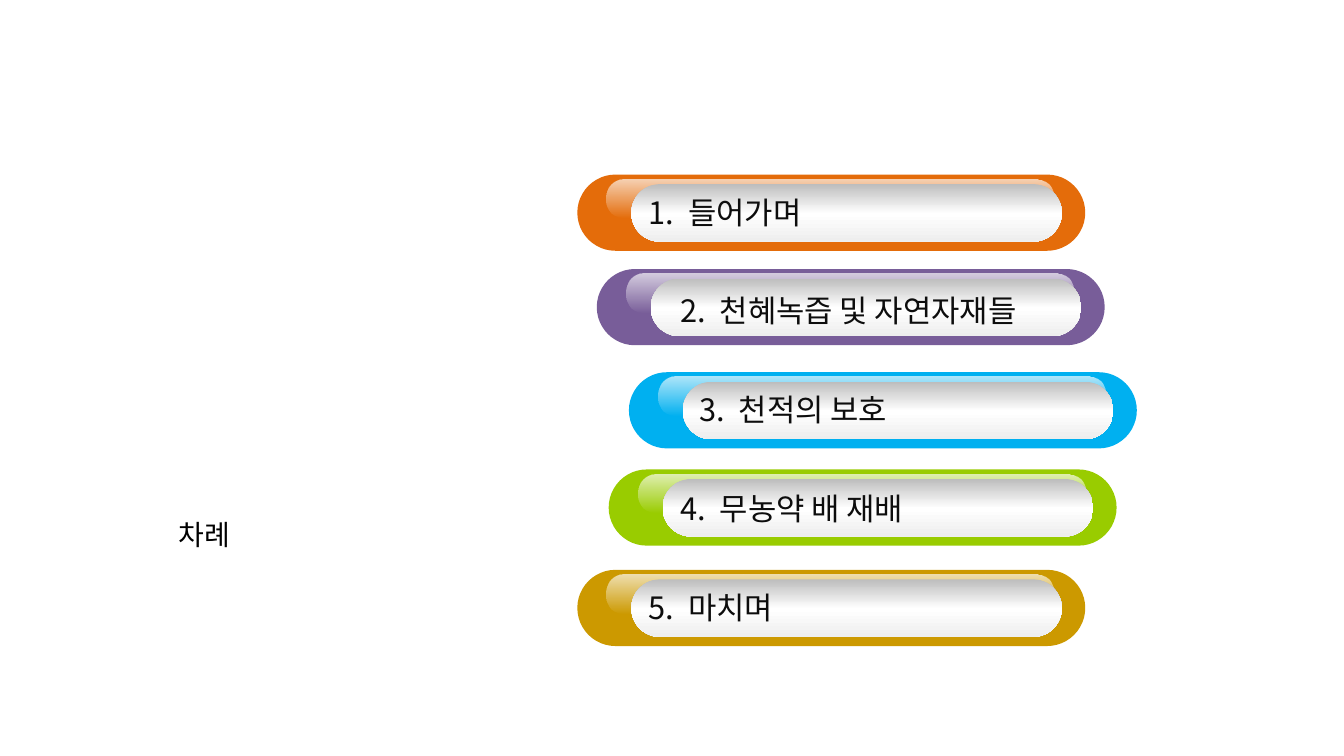
from lxml import etree
from pptx import Presentation
from pptx.dml.color import RGBColor
from pptx.enum import shapes, text
from pptx.oxml.ns import qn
from pptx.util import Cm, Pt

FONT = "Noto Sans CJK KR"
GLOSS = [(0, "FFFFFF", 70), (100, "FFFFFF", 0)]
SILVER = [(0, "BDBDBD", 100), (51, "FFFFFF", 100), (100, "EEEEEE", 100)]


def add_pill(group, box, roundness, stops):
    """Add a rounded bar; stops are (position, colour, opacity) in percent, top to bottom."""
    pill = group.shapes.add_shape(
        shapes.MSO_SHAPE.ROUNDED_RECTANGLE, *[Cm(length) for length in box])
    pill.adjustments[0] = roundness
    pill.shadow.inherit = False
    pill.line.fill.background()
    if len(stops) == 1:
        pill.fill.solid()
        pill.fill.fore_color.rgb = RGBColor.from_string(stops[0][1])
        return
    pill.fill.gradient()
    pill.fill.gradient_angle = 270
    stop_list = next(pill._element.iter(qn("a:gsLst")))
    for old_stop in list(stop_list):
        stop_list.remove(old_stop)
    for position, colour, opacity in stops:
        stop = etree.SubElement(stop_list, qn("a:gs"), pos=str(position * 1000))
        shade = etree.SubElement(stop, qn("a:srgbClr"), val=colour)
        etree.SubElement(shade, qn("a:alpha"), val=str(opacity * 1000))


def write_line(shape, words, size, colour):
    frame = shape.text_frame
    frame.word_wrap = True
    frame.vertical_anchor = text.MSO_ANCHOR.MIDDLE
    para = frame.paragraphs[0]
    para.text = words
    para.alignment = text.PP_ALIGN.LEFT
    para.font.size = Pt(size)
    para.font.name = FONT
    para.font.color.rgb = RGBColor.from_string(colour)
    etree.SubElement(para.font._element, qn("a:ea"), typeface=FONT)
    return para


deck = Presentation()
deck.slide_width, deck.slide_height = Cm(33.87), Cm(19.05)
page = deck.slides.add_slide(deck.slide_layouts[5])

title = page.shapes.title
title.left, title.top, title.width, title.height = Cm(4.24), Cm(12.9), Cm(10.31), Cm(1.22)
write_line(title, "차례", 20, "000000").line_spacing = 0.9

# Bar left and top, colour, text left, words
chapters = [
    (14.55, 4.4, "E46C0A", 16.1, "들어가며"),
    (15.04, 6.78, "785D99", 16.89, "천혜녹즙 및 자연자재들"),
    (15.85, 9.38, "00B0F0", 17.37, "천적의 보호"),
    (15.34, 11.83, "99CC00", 16.89, "무농약 배 재배"),
    (14.55, 14.36, "CC9900", 16.1, "마치며"),
]
for left, top, colour, _, _ in chapters:
    bar = page.shapes.add_group_shape()
    add_pill(bar, (left, top, 12.8, 1.92), 0.5, [(0, colour, 100)])
    add_pill(bar, (left + 0.74, top + 0.12, 11.27, 0.97), 0.43, GLOSS)
    add_pill(bar, (left + 1.36, top + 0.24, 10.85, 1.45), 0.5, SILVER)

for index, (_, _, _, left, words) in enumerate(chapters):
    label = page.shapes.add_textbox(Cm(left), Cm(4.8 + 2.49 * index), Cm(10.41), Cm(1.07))
    para = write_line(label, f"{index + 1}.\t{words}", 22, "0D0D0D")
    # A hanging indent sets the gap after the number
    properties = para._p.get_or_add_pPr()
    properties.set("marL", str(Cm(1)))
    properties.set("indent", str(-Cm(1)))

deck.save("out.pptx")
